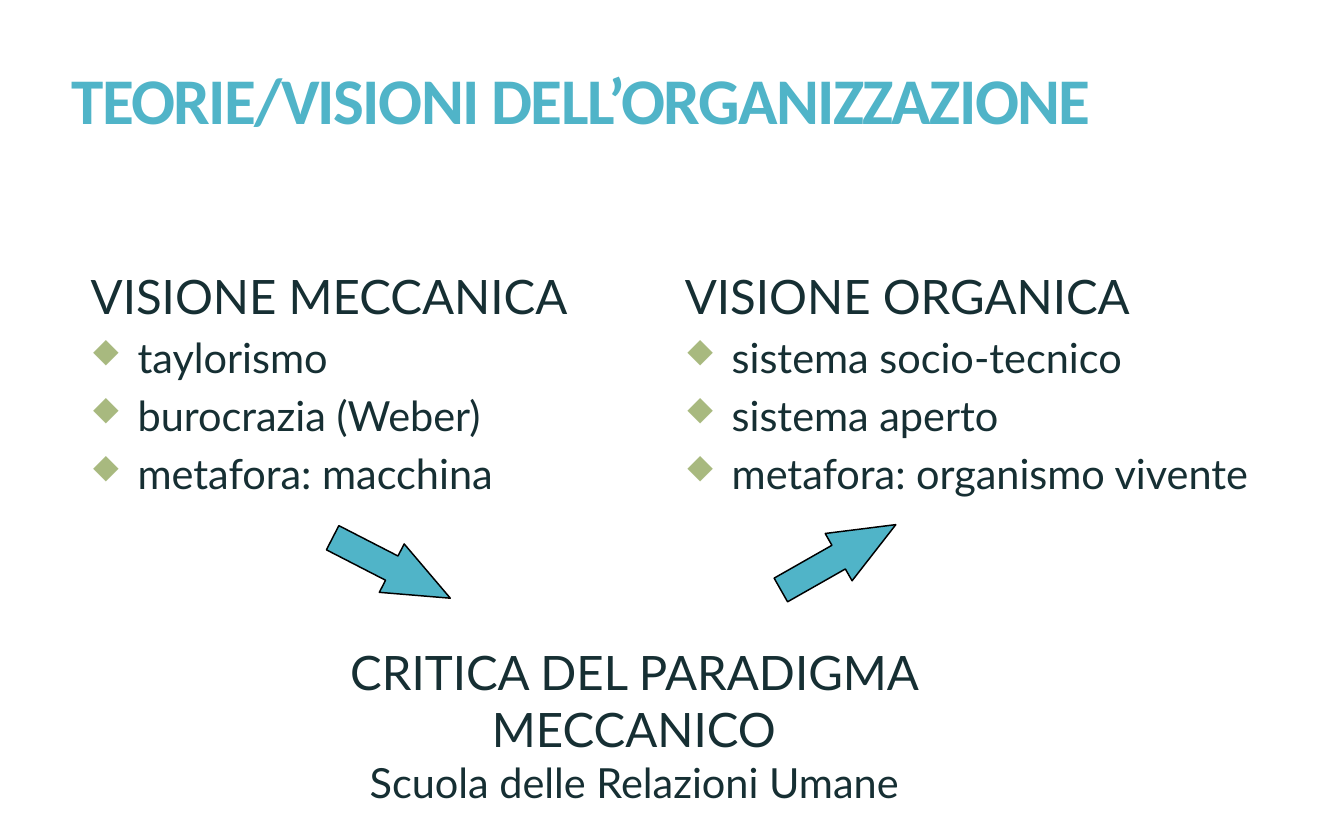
from dataclasses import dataclass

from lxml import etree
from pptx import Presentation
from pptx.dml.color import RGBColor
from pptx.enum.shapes import MSO_SHAPE
from pptx.enum.text import PP_ALIGN
from pptx.oxml.ns import qn
from pptx.util import Inches, Pt

ARROW = MSO_SHAPE.RIGHT_ARROW
LEFT, CENTER = PP_ALIGN.LEFT, PP_ALIGN.CENTER


@dataclass(frozen=True)
class Theme:
    accent: str = "50B4C8"
    ink: str = "162F33"
    bullet: str = "A8B97F"
    outline: str = "000000"
    title_font: str = "Calibri"
    body_font: str = "Lato"
    bullet_font: str = "Wingdings"
    title_size: int = 44
    heading_size: int = 32
    item_size: int = 28


def write(p, text, font, size, color, bold=False, spacing=None, align=LEFT):
    p.alignment = align
    r = p.add_run()
    r.text = text
    r.font.name = font
    r.font.size = Pt(size)
    r.font.bold = bold
    r.font.color.rgb = RGBColor.from_string(color)
    if spacing is not None:
        r.font._element.set("spc", str(round(spacing * 100)))


def add_bullet(p, color, font):
    pPr = p._p.get_or_add_pPr()
    pPr.set("marL", str(Inches(0.44)))
    pPr.set("indent", str(-Inches(0.44)))
    clr = etree.SubElement(pPr, qn("a:buClr"))
    etree.SubElement(clr, qn("a:srgbClr"), val=color)
    etree.SubElement(pPr, qn("a:buSzPct"), val="75000")
    etree.SubElement(pPr, qn("a:buFont"), typeface=font, charset="2")
    etree.SubElement(pPr, qn("a:buChar"), char="u")


class SlideBuilder:
    """Draws the elements of one slide in a shared theme."""

    def __init__(self, slide, theme):
        self.s = slide
        self.theme = theme

    def text_frame(self, left, top, width, height):
        sp = self.s.shapes.add_textbox(Inches(left), Inches(top), Inches(width), Inches(height))
        tf = sp.text_frame
        tf.word_wrap = True
        tf.margin_left = tf.margin_right = Inches(0.12)
        tf.margin_top = tf.margin_bottom = Inches(0.06)
        return tf

    def title(self, text, box):
        t = self.theme
        p = self.text_frame(*box).paragraphs[0]
        p.line_spacing = 0.85
        write(p, text, t.title_font, t.title_size, t.accent, bold=True, spacing=-1.1)

    def heading(self, text, box, align=LEFT):
        t = self.theme
        tf = self.text_frame(*box)
        write(tf.paragraphs[0], text, t.body_font, t.heading_size, t.ink, align=align)
        return tf

    def vision(self, heading, items, box):
        t = self.theme
        tf = self.heading(heading, box)
        for item in items:
            p = tf.add_paragraph()
            p.space_before = Pt(0.2 * t.item_size)
            add_bullet(p, t.bullet, t.bullet_font)
            write(p, item, t.body_font, t.item_size, t.ink)

    def conclusion(self, heading, detail, box):
        t = self.theme
        tf = self.heading(heading, box, CENTER)
        write(tf.add_paragraph(), detail, t.body_font, t.item_size, t.ink, align=CENTER)

    def arrow(self, left, top, rotation):
        sp = self.s.shapes.add_shape(ARROW, Inches(left), Inches(top), Inches(1.24), Inches(0.51))
        sp.adjustments[0] = 0.5
        sp.adjustments[1] = 1.21
        sp.rotation = rotation
        sp.shadow.inherit = False
        sp.fill.solid()
        sp.fill.fore_color.rgb = RGBColor.from_string(self.theme.accent)
        sp.line.color.rgb = RGBColor.from_string(self.theme.outline)
        sp.line.width = Pt(1)


def main():
    prs = Presentation()
    prs.slide_width, prs.slide_height = Inches(12.6), Inches(12.6 * 10 / 16)
    b = SlideBuilder(prs.slides.add_slide(prs.slide_layouts[6]), Theme())

    b.title("TEORIE/VISIONI DELL’ORGANIZZAZIONE", (0.55, 0.61, 11.73, 0.75))
    b.vision(
        "VISIONE MECCANICA",
        ["taylorismo", "burocrazia (Weber)", "metafora: macchina"],
        (0.73, 2.44, 5.15, 2.28),
    )
    b.vision(
        "VISIONE ORGANICA",
        ["sistema socio-tecnico", "sistema aperto", "metafora: organismo vivente"],
        (6.3, 2.44, 5.67, 2.43),
    )
    b.conclusion(
        "CRITICA DEL PARADIGMA MECCANICO",
        "Scuola delle Relazioni Umane",
        (1.96, 5.97, 7.97, 1.12),
    )
    b.arrow(3.05, 5.07, 27.2)
    b.arrow(7.24, 4.97, 330.4)
    prs.save("out.pptx")


if __name__ == "__main__":
    main()
